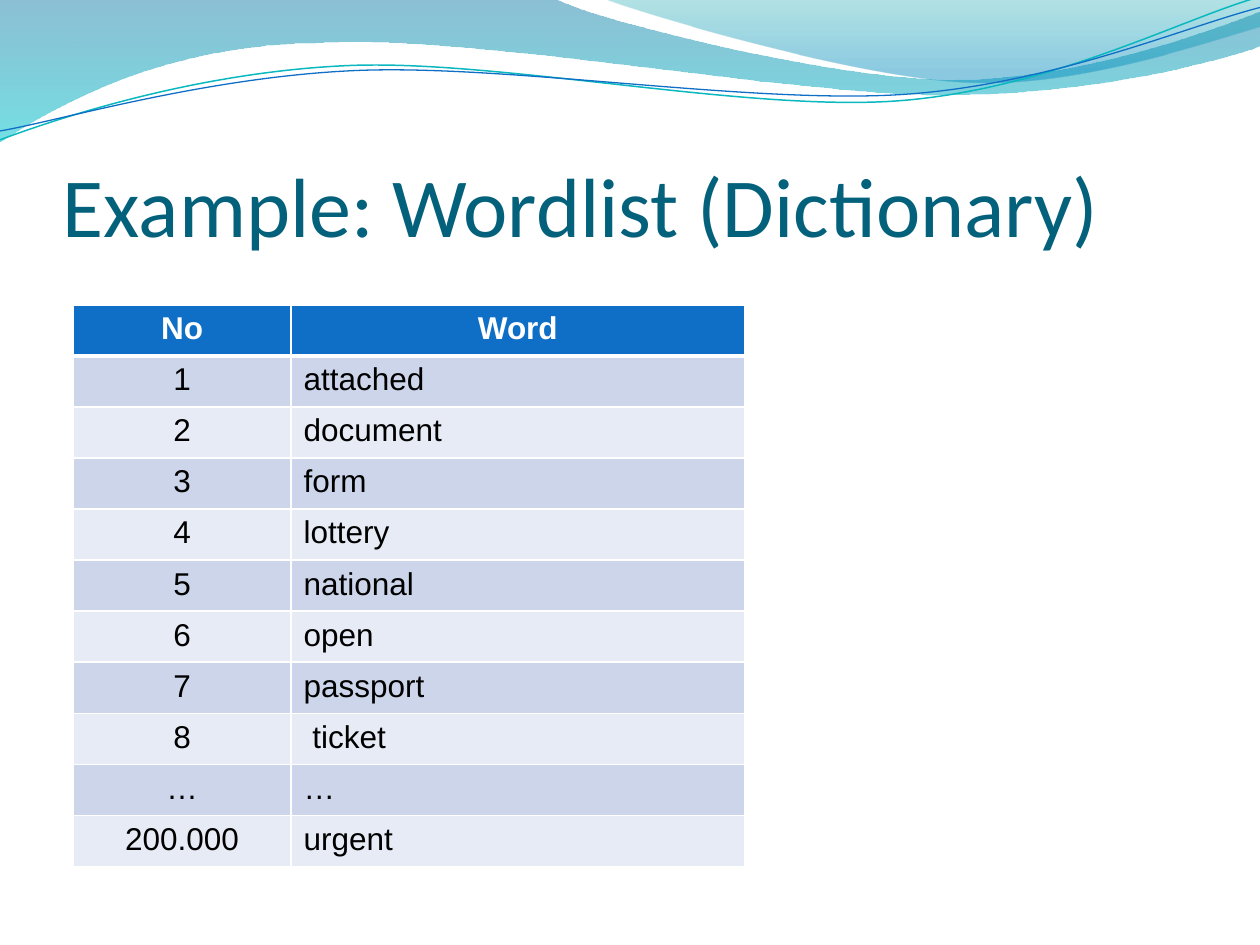
"""Build the wordlist slide with its wave banner and table."""
from math import cos, radians, sin
from lxml.etree import SubElement
from pptx import Presentation
from pptx.dml.color import RGBColor
from pptx.enum.text import MSO_ANCHOR, PP_ALIGN
from pptx.oxml.ns import qn
from pptx.util import Inches, Pt

WHITE = RGBColor(0xFF, 0xFF, 0xFF)
BLACK = RGBColor(0x00, 0x00, 0x00)
BLUE = RGBColor(0x0F, 0x6F, 0xC6)
TEAL = RGBColor(0x0A, 0xB8, 0xBF)
NAVY = RGBColor(0x04, 0x61, 0x7B)
DARK = RGBColor(0xCC, 0xD5, 0xEA)
LIGHT = RGBColor(0xE7, 0xEB, 0xF5)
DEEP = RGBColor(0x00, 0x74, 0xA1)
CYAN = RGBColor(0x00, 0xC6, 0xCF)
MINT = RGBColor(0x00, 0xA1, 0xA9)
SKY = RGBColor(0x00, 0x8B, 0xBF)
TILT = 2.7


def add_wave(start, parts, closed):
    dots = [(Inches(x), Inches(y)) for part in parts for x, y in zip(part[::2], part[1::2])]
    pen = slide.shapes.build_freeform(Inches(start[0]), Inches(start[1]))
    pen.add_line_segments(dots, close=closed)
    wave = pen.convert_to_shape()
    wave.shadow.inherit = False
    legs = iter(list(wave.element.spPr.iter(qn("a:lnTo"))))
    for part in parts:
        leg = next(legs)
        if len(part) == 6:
            leg.tag = qn("a:cubicBezTo")
            for _ in range(2):
                spare = next(legs)
                leg.append(spare[0])
                spare.getparent().remove(spare)
    return wave


def add_edge(cell, side, width):
    edge = SubElement(cell._tc.get_or_add_tcPr(), qn("a:ln" + side), w=str(Pt(width)))
    fill = SubElement(edge, qn("a:solidFill"))
    SubElement(fill, qn("a:srgbClr"), val=str(WHITE))


deck = Presentation()
deck.slide_width, deck.slide_height = Inches(10), Inches(7.5)
slide = deck.slides.add_slide(deck.slide_layouts[6])

bands = [
    ((0, -0.01),
     [(4.4, -0.01), (4.76, 0.17, 6.64, 0.63, 7.58, 0.63),
      (8.53, 0.63, 9.58, 0.26, 10, 0.09), (10.01, 0.36),
      (9.83, 0.44, 8.7, 0.76, 7.46, 0.75), (6.22, 0.75, 3.82, 0.28, 2.57, 0.34),
      (1.29, 0.35, 0.46, 0.83, -0.01, 1.13)],
     [(0, DEEP, 45), (1, CYAN, 55)]),
    ((4.79, -0.01),
     [(5.09, 0.11, 6.82, 0.62, 7.69, 0.65), (8.56, 0.69, 9.61, 0.32, 10, 0.21), (10, 0)],
     [(0, MINT, 30), (0.8, SKY, 45)]),
]
for start, parts, stops in bands:
    band = add_wave(start, parts, True)
    band.line.fill.background()
    band.fill.gradient()
    band.fill.gradient_angle = 270
    for stop, (place, color, alpha) in zip(band.fill.gradient_stops, stops):
        stop.position = place
        stop.color.rgb = color
    for node, (place, color, alpha) in zip(band.element.spPr.iter(qn("a:srgbClr")), stops):
        SubElement(node, qn("a:alpha"), val=str(alpha * 1000))

lines = [
    ([(0, 1.11), (0.48, 0.93, 1.58, 0.57, 2.77, 0.52), (3.95, 0.47, 5.93, 0.89, 7.13, 0.8),
      (8.33, 0.71, 9.38, 0.15, 9.98, -0.02)], 4.99, 0.58, TEAL, 0.85),
    ([(0, 1.04), (0.47, 0.96, 1.64, 0.61, 2.83, 0.56), (4.03, 0.51, 5.97, 0.83, 7.17, 0.75),
      (8.36, 0.67, 9.41, 0.21, 10, 0.06)], 5, 0.59, BLUE, 0.75),
]
co, si = cos(radians(TILT)), sin(radians(TILT))
for parts, mid, high, color, width in lines:
    level = []
    for part in parts:
        turned = []
        for x, y in zip(part[::2], part[1::2]):
            dx, dy = x - mid, y - high
            turned += [mid + dx * co - dy * si, high + dx * si + dy * co]
        level.append(turned)
    wave = add_wave(level[0], level[1:], False)
    wave.rotation = 360 - TILT
    wave.fill.background()
    wave.line.color.rgb = color
    wave.line.width = Pt(width)

title = slide.shapes.add_textbox(Inches(0.5), Inches(0.77), Inches(9), Inches(1.25))
frame = title.text_frame
frame.word_wrap = True
frame.vertical_anchor = MSO_ANCHOR.BOTTOM
frame.margin_left = frame.margin_right = frame.margin_bottom = 0
frame.text = "Example: Wordlist (Dictionary)"
font = frame.paragraphs[0].runs[0].font
font.name, font.size, font.color.rgb = "Calibri", Pt(48), NAVY

words = ["attached", "document", "form", "lottery", "national", "open", "passport", " ticket"]
rows = [("No", "Word")]
rows += [(str(i), word) for i, word in enumerate(words, 1)]
rows += [("…", "…"), ("200.000", "urgent")]

table = slide.shapes.add_table(
    len(rows), 2, Inches(0.58), Inches(2.42), Inches(5.33), Inches(4.46)).table
table.columns[0].width, table.columns[1].width = Inches(1.73), Inches(3.6)
for r, row in enumerate(rows):
    for c, text in enumerate(row):
        cell = table.cell(r, c)
        for side in "LRTB":
            thick = (r, side) in ((0, "B"), (1, "T"))
            add_edge(cell, side, 3 if thick else 1)
        cell.fill.solid()
        cell.fill.fore_color.rgb = BLUE if r == 0 else DARK if r % 2 else LIGHT
        cell.text_frame.text = text
        line = cell.text_frame.paragraphs[0]
        line.alignment = PP_ALIGN.CENTER if r == 0 or c == 0 else PP_ALIGN.LEFT
        font = line.runs[0].font
        font.name, font.size, font.bold = "Arial", Pt(18), r == 0
        font.color.rgb = WHITE if r == 0 else BLACK

deck.save("out.pptx")
